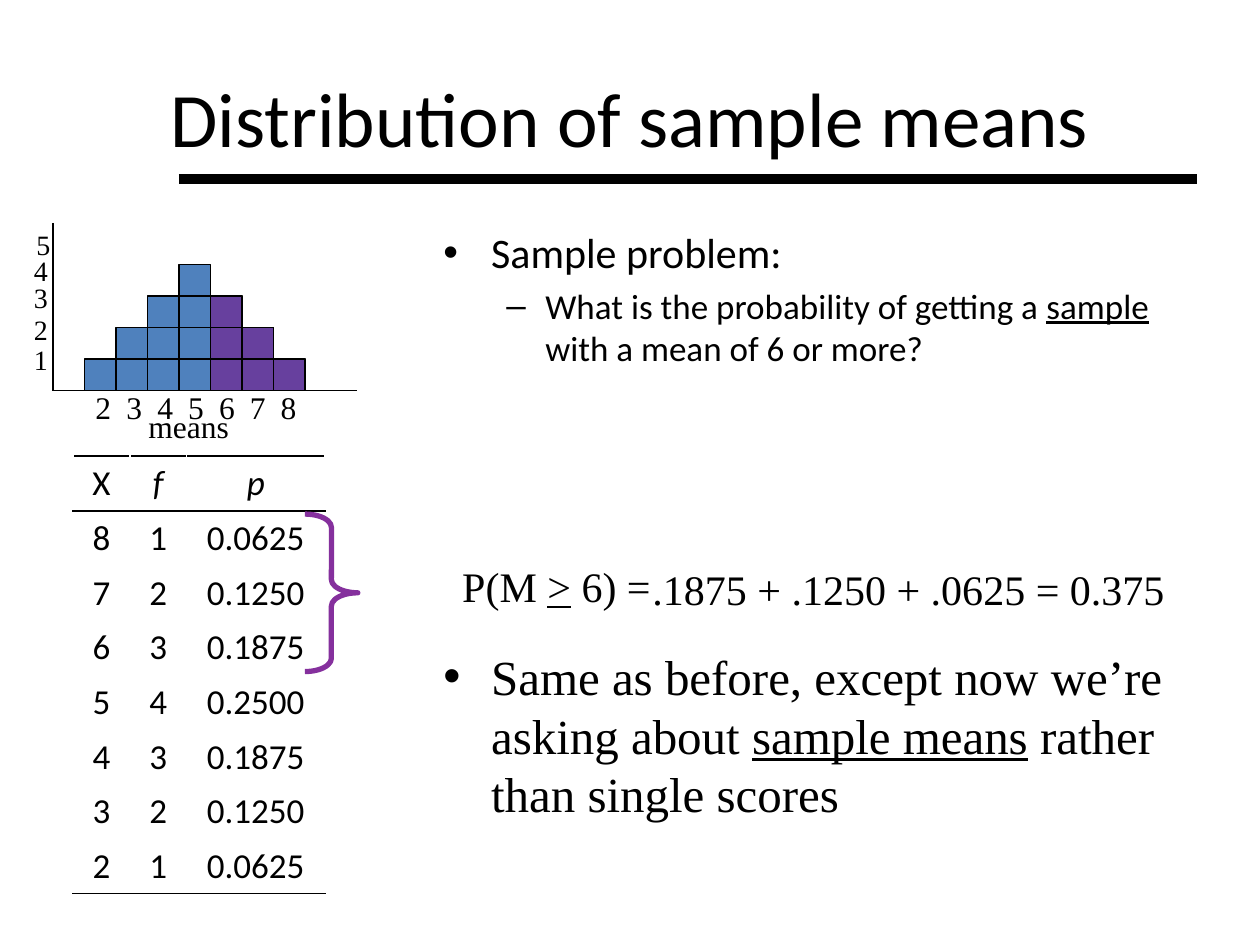
import dataclasses

import lxml.etree
import pptx
import pptx.dml.color
import pptx.enum.shapes
import pptx.enum.text
import pptx.oxml.ns
import pptx.util

Inches = pptx.util.Inches
Pt = pptx.util.Pt
Shape = pptx.enum.shapes.MSO_SHAPE
Anchor = pptx.enum.text.MSO_ANCHOR
Align = pptx.enum.text.PP_ALIGN
qualify = pptx.oxml.ns.qn


@dataclasses.dataclass(frozen=True)
class Theme:
    ink: str = "000000"
    bar: str = "4F81BD"
    highlight: str = "800080"
    brace: str = "85309D"
    sans: str = "Calibri"
    serif: str = "Times New Roman"
    title: int = 44
    conclusion: int = 28
    body: int = 24
    detail: int = 20
    label: int = 18
    tick: int = 16


THEME = Theme()
FREQUENCIES = {2: 1, 3: 2, 4: 3, 5: 4, 6: 3, 7: 2, 8: 1}


def color(value):
    return pptx.dml.color.RGBColor.from_string(value)


def add_element(parent, tag, **attributes):
    return lxml.etree.SubElement(parent, qualify(tag), attributes)


def add_runs(paragraph, pieces, size, font):
    for text, style in pieces:
        run = paragraph.add_run()
        run.text = text
        run.font.size = Pt(size)
        run.font.name = font
        run.font.color.rgb = color(THEME.ink)
        run.font.underline = style == "underline"
        run.font.italic = style == "italic"


def add_text(shapes, box, pieces, size, font, wrap=True):
    frame = shapes.add_textbox(*map(Inches, box)).text_frame
    frame.word_wrap = wrap
    add_runs(frame.paragraphs[0], pieces, size, font)
    return frame


def add_line(shapes, start, end, width):
    line = shapes.add_connector(
        pptx.enum.shapes.MSO_CONNECTOR.STRAIGHT, *map(Inches, start + end))
    line.line.color.rgb = color(THEME.ink)
    line.line.width = Pt(width)
    add_element(line._element.spPr, "a:effectLst")


def set_bullet(paragraph, symbol, margin, indent, size):
    paragraph.space_before = Pt(size * 0.2)
    properties = paragraph._p.get_or_add_pPr()
    properties.set("marL", str(Inches(margin)))
    properties.set("indent", str(Inches(-indent)))
    add_element(properties, "a:buFont", typeface="Arial")
    add_element(properties, "a:buChar", char=symbol)


def add_title(slide, box):
    left, top, width, height = box
    add_line(slide.shapes, (left + 0.92, 1.42), (left + width, 1.42), 6)
    frame = add_text(slide.shapes, box, [("Distribution of sample means", None)],
                     THEME.title, THEME.sans)
    frame.vertical_anchor = Anchor.MIDDLE
    frame.paragraphs[0].alignment = Align.CENTER


def add_square(shapes, left, top, size, fill, opacity):
    square = shapes.add_shape(Shape.RECTANGLE, *map(Inches, (left, top, size, size)))
    square.shadow.inherit = False
    square.fill.solid()
    square.fill.fore_color.rgb = color(fill)
    square.line.color.rgb = color(THEME.ink)
    square.line.width = Pt(0.75)
    if opacity < 100:
        add_element(square._element.spPr.find(".//" + qualify("a:srgbClr")),
                    "a:alpha", val=str(opacity * 1000))


def add_bars(shapes, left, base, size, smallest_mean, fill, opacity=100):
    for mean, frequency in FREQUENCIES.items():
        if mean >= smallest_mean:
            for level in range(1, frequency + 1):
                add_square(shapes, left + (mean - 2) * size, base - level * size,
                           size, fill, opacity)


def add_histogram(slide, box):
    left, top, width, height = box
    base = top + height
    shapes = slide.shapes.add_group_shape().shapes
    add_bars(shapes, left + 0.25, base, 0.25, 2, THEME.bar)
    add_line(shapes, (left, top), (left, base), 0.75)
    add_line(shapes, (left, base), (left + width, base), 0.75)
    add_text(shapes, (left + 0.66, base + 0.08, 0.84, 0.4), [("means", None)],
             THEME.label, THEME.serif, wrap=False)
    for index, mean in enumerate(FREQUENCIES):
        add_text(shapes, (left + 0.24 + index * 0.245, base - 0.07, 0.33, 0.4),
                 [(str(mean), None)], THEME.label, THEME.serif, wrap=False)
    for tick, offset in enumerate((0.9, 0.66, 0.41, 0.19, -0.01), 1):
        nudge = 0.02 if tick == 5 else 0
        add_text(shapes, (left - 0.25 + nudge, top + offset, 0.31, 0.37),
                 [(str(tick), None)], THEME.tick, THEME.serif, wrap=False)
    highlighted = slide.shapes.add_group_shape().shapes
    add_bars(highlighted, left + 0.25, base, 0.25, 6, THEME.highlight, 50)


def add_border(cell, side):
    properties = cell._tc.get_or_add_tcPr()
    border = lxml.etree.Element(qualify(side), w=str(Pt(1)))
    fill = add_element(border, "a:solidFill")
    add_element(fill, "a:srgbClr", val=THEME.ink)
    properties.insert(len(properties.findall(qualify("a:lnT"))), border)


def add_frequency_table(slide, box):
    total = sum(FREQUENCIES.values())
    rows = [("X", "f", "p")]
    for mean, frequency in reversed(FREQUENCIES.items()):
        rows.append((str(mean), str(frequency), f"{frequency / total:.4f}"))
    table = slide.shapes.add_table(len(rows), 3, *map(Inches, box)).table
    table.first_row = table.horz_banding = False
    for column, width in zip(table.columns, (0.45, 0.45, 1.1)):
        column.width = Inches(width)
    for row_index, values in enumerate(rows):
        for column_index, value in enumerate(values):
            cell = table.cell(row_index, column_index)
            cell.fill.background()
            paragraph = cell.text_frame.paragraphs[0]
            paragraph.alignment = Align.CENTER
            paragraph.space_before = Pt(6)
            style = "italic" if value in ("f", "p") else None
            add_runs(paragraph, [(value, style)], THEME.detail, THEME.sans)
            if row_index in (0, 1):
                add_border(cell, "a:lnT")
            if row_index in (0, len(rows) - 1):
                add_border(cell, "a:lnB")


def add_brace(slide, box):
    brace = slide.shapes.add_shape(Shape.RIGHT_BRACE, *map(Inches, box))
    brace.shadow.inherit = False
    brace.adjustments[0] = 0.25
    brace.fill.background()
    brace.line.color.rgb = color(THEME.brace)
    brace.line.width = Pt(3)


def add_problem(slide, box):
    frame = add_text(slide.shapes, box, [("Sample problem:", None)],
                     THEME.body, THEME.sans)
    set_bullet(frame.paragraphs[0], "•", 0.38, 0.38, THEME.body)
    question = frame.add_paragraph()
    question.level = 1
    add_runs(question, [("What is the probability of getting a ", None),
                        ("sample", "underline"),
                        (" with a mean of 6 or more?", None)],
             THEME.detail, THEME.sans)
    set_bullet(question, "–", 0.81, 0.31, THEME.detail)


def add_answer(slide, box):
    left, top, width, height = box
    add_text(slide.shapes, (left, top, 1.85, height),
             [("P(M ", None), (">", "underline"), (" 6) =", None)],
             THEME.body, THEME.serif)
    add_text(slide.shapes, (left + 1.51, top + 0.02, width - 1.51, height),
             [(".1875 + .1250 + .0625 = 0.375", None)],
             THEME.body, THEME.serif, wrap=False)


def add_conclusion(slide, box):
    frame = add_text(slide.shapes, box,
                     [("Same as before, except now we’re asking about ", None),
                      ("sample means", "underline"),
                      (" rather than single scores", None)],
                     THEME.conclusion, THEME.serif)
    set_bullet(frame.paragraphs[0], "•", 0.38, 0.38, THEME.conclusion)


def main():
    presentation = pptx.Presentation()
    presentation.slide_width = Inches(10)
    presentation.slide_height = Inches(7.5)
    slide = presentation.slides.add_slide(presentation.slide_layouts[6])
    add_title(slide, (0.5, 0.3, 9, 1.25))
    add_histogram(slide, (0.42, 1.77, 2.41, 1.33))
    add_frequency_table(slide, (0.58, 3.62, 2, 3.47))
    add_problem(slide, (3.42, 1.75, 6, 1.58))
    add_brace(slide, (2.42, 4.08, 0.42, 1.25))
    add_answer(slide, (3.57, 4.4, 5.78, 0.5))
    add_conclusion(slide, (3.42, 5.08, 6, 1.58))
    presentation.save("out.pptx")


if __name__ == "__main__":
    main()
